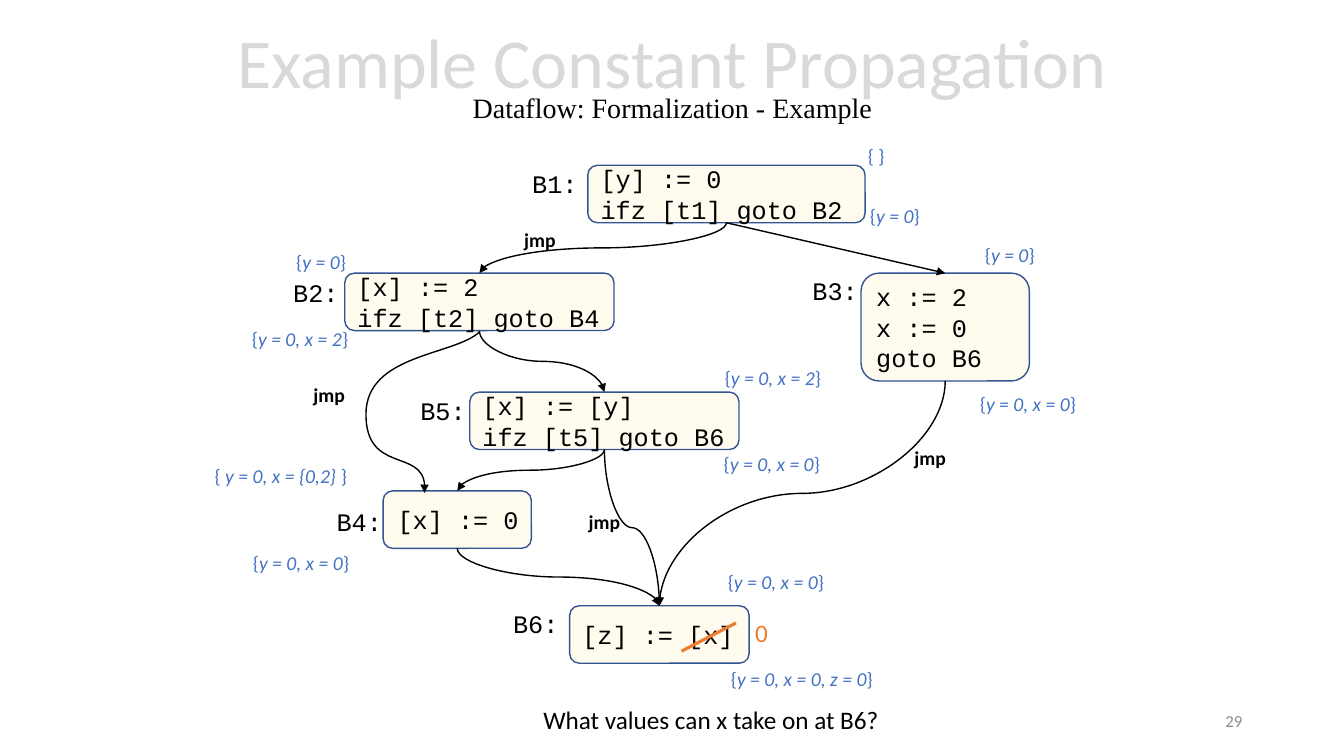
import pptx
import pptx.util
import pptx.dml.color
import pptx.enum.shapes
import pptx.enum.text
import pptx.oxml.ns
import lxml.etree

Inches = pptx.util.Inches
Pt = pptx.util.Pt
RGBColor = pptx.dml.color.RGBColor
qn = pptx.oxml.ns.qn
ALIGN = pptx.enum.text.PP_ALIGN
ANCHOR = pptx.enum.text.MSO_ANCHOR
CONNECTOR = pptx.enum.shapes.MSO_CONNECTOR

BLACK = RGBColor(0x00, 0x00, 0x00)
TITLE_GRAY = RGBColor(0xD9, 0xD9, 0xD9)
NUMBER_GRAY = RGBColor(0x8C, 0x8C, 0x8C)
CREAM = RGBColor(0xFF, 0xF2, 0xCC)
BORDER_BLUE = RGBColor(0x32, 0x54, 0x91)
FACT_BLUE = RGBColor(0x44, 0x72, 0xC4)
ORANGE = RGBColor(0xED, 0x7D, 0x31)

deck = pptx.Presentation()
deck.slide_width = Inches(13.33)
deck.slide_height = Inches(7.5)
page = deck.slides.add_slide(deck.slide_layouts[6])


def add_label(left, top, width, height, texts, size, color, font="Calibri"):
    box = page.shapes.add_textbox(Inches(left), Inches(top), Inches(width), Inches(height))
    box.text_frame.word_wrap = False
    box.text_frame.auto_size = pptx.enum.text.MSO_AUTO_SIZE.SHAPE_TO_FIT_TEXT
    para = box.text_frame.paragraphs[0]
    para.font.size = Pt(size)
    para.font.name = font
    para.font.color.rgb = color
    for text in texts:
        para.add_run().text = text
    return para


def style_line(shape, color, width, arrow):
    shape.line.color.rgb = color
    shape.line.width = Pt(width)
    properties = shape.element.spPr
    if arrow:
        outline = properties.find(qn("a:ln"))
        lxml.etree.SubElement(outline, qn("a:tailEnd")).set("type", "triangle")
    lxml.etree.SubElement(properties, qn("a:effectLst"))


title = page.shapes.add_textbox(Inches(1.67), Inches(0.09), Inches(10), Inches(1.45))
title.text_frame.word_wrap = True
title.text_frame.vertical_anchor = ANCHOR.MIDDLE
para = title.text_frame.paragraphs[0]
para.alignment = ALIGN.CENTER
para.line_spacing = 0.7
for text, size, font, color in [
    ("Example Constant Propagation", 50, "Calibri", TITLE_GRAY),
    ("Dataflow: Formalization - Example", 20, "Times New Roman", BLACK),
]:
    if para.runs:
        para.add_line_break()
    span = para.add_run()
    span.text = text
    span.font.size = Pt(size)
    span.font.name = font
    span.font.color.rgb = color

number = page.shapes.add_textbox(Inches(9.42), Inches(6.95), Inches(3), Inches(0.4))
number.text_frame.word_wrap = True
number.text_frame.vertical_anchor = ANCHOR.MIDDLE
para = number.text_frame.paragraphs[0]
para.text = "29"
para.alignment = ALIGN.RIGHT
para.font.size = Pt(12)
para.font.name = "Calibri"
para.font.color.rgb = NUMBER_GRAY

blocks = {}
for name, left, top, width, height, label_left, label_top, code in [
    ("B1", 5.83, 1.64, 2.75, 0.57, 5.18, 1.62, ["[y] := 0", "ifz [t1] goto B2"]),
    ("B2", 3.42, 2.71, 2.67, 0.57, 2.81, 2.7, ["[x] := 2", "ifz [t2] goto B4"]),
    ("B3", 8.54, 2.71, 1.67, 1.07, 7.96, 2.68, ["x := 2", "x := 0", "goto B6"]),
    ("B4", 3.8, 4.87, 1.47, 0.57, 3.24, 4.97, ["[x] := 0"]),
    ("B5", 4.66, 3.89, 2.67, 0.57, 4.07, 3.87, ["[x] := [y]", "ifz [t5] goto B6"]),
    ("B6", 5.65, 6.01, 1.78, 0.57, 4.99, 5.99, ["[z] := [x]"]),
]:
    block = page.shapes.add_shape(
        pptx.enum.shapes.MSO_SHAPE.ROUNDED_RECTANGLE,
        Inches(left), Inches(top), Inches(width), Inches(height))
    block.shadow.inherit = False
    block.fill.solid()
    block.fill.fore_color.rgb = CREAM
    tint = block.element.spPr.find(qn("a:solidFill")).find(qn("a:srgbClr"))
    lxml.etree.SubElement(tint, qn("a:alpha")).set("val", "30000")
    block.line.color.rgb = BORDER_BLUE
    block.line.width = Pt(1)
    block.text_frame.word_wrap = True
    block.text_frame.vertical_anchor = ANCHOR.MIDDLE
    block.text_frame.text = "\n".join(code)
    for para in block.text_frame.paragraphs:
        para.alignment = ALIGN.RIGHT if name == "B4" else ALIGN.LEFT
        para.font.size = Pt(18)
        para.font.name = "Courier New"
        para.font.color.rgb = BLACK
    blocks[name] = block
    add_label(label_left, label_top, 0.65, 0.4, [name + ":"], 18, BLACK, "Courier New")

for source, target in [("B1", "B2"), ("B1", "B3"), ("B2", "B5"), ("B3", "B6"),
                       ("B5", "B6"), ("B5", "B4"), ("B4", "B6")]:
    straight = target == "B3"
    edge = page.shapes.add_connector(
        CONNECTOR.STRAIGHT if straight else CONNECTOR.CURVE, 0, 0, 0, 0)
    edge.begin_connect(blocks[source], 2)
    edge.end_connect(blocks[target], 0)
    style_line(edge, BLACK, 1, True)
    if not straight:
        middle_x = (edge.begin_x + edge.end_x) // 2
        middle_y = (edge.begin_y + edge.end_y) // 2
        rightward = edge.end_x > edge.begin_x
        drop, reach = edge.height, edge.width
        edge.left, edge.top = middle_x - drop // 2, middle_y - reach // 2
        edge.width, edge.height = drop, reach
        transform = edge.element.spPr.find(qn("a:xfrm"))
        transform.set("rot", "16200000" if rightward else "5400000")
        transform.set("flipH", "1" if rightward else "0")
        transform.set("flipV", "0")

builder = page.shapes.build_freeform(Inches(4.76), Inches(3.29))
builder.add_line_segments(
    [(Inches(x), Inches(y)) for x, y in [
        (4.51, 3.53), (3.63, 3.51), (3.63, 4.11), (3.63, 4.7), (4.26, 4.42), (4.21, 4.89)]],
    close=False)
loop_edge = builder.convert_to_shape()
loop_edge.fill.background()
style_line(loop_edge, BLACK, 1, True)
segments = list(loop_edge.element.iter(qn("a:lnTo")))
outline = segments[0].getparent()
for start in range(0, len(segments), 3):
    curve = lxml.etree.SubElement(outline, qn("a:cubicBezTo"))
    for segment in segments[start:start + 3]:
        curve.append(segment[0])
        outline.remove(segment)

for left, top in [(5.1, 2.21), (3.01, 3.75), (5.74, 5.01), (8.97, 4.37)]:
    add_label(left, top, 0.52, 0.34, ["jmp"], 14, BLACK).font.bold = True

for left, top, width, fact in [
    (8.51, 1.38, 0.37, " "),
    (8.53, 1.97, 0.7, "y = 0"),
    (9.67, 2.36, 0.7, "y = 0"),
    (2.84, 2.43, 0.7, "y = 0"),
    (2.4, 3.19, 1.16, "y = 0, x = 2"),
    (7.09, 3.58, 1.16, "y = 0, x = 2"),
    (9.62, 3.84, 1.16, "y = 0, x = 0"),
    (7.08, 4.43, 1.16, "y = 0, x = 0"),
    (2.03, 4.55, 1.52, " y = 0, x = {0,2} "),
    (2.41, 5.42, 1.16, "y = 0, x = 0"),
    (7.12, 5.61, 1.16, "y = 0, x = 0"),
    (7.15, 6.57, 1.62, "y = 0, x = 0, z = 0"),
]:
    para = add_label(left, top, width, 0.34, ["{", fact, "}"], 14, FACT_BLUE)
    para.runs[1].font.italic = fact != " "

strike = page.shapes.add_connector(
    CONNECTOR.STRAIGHT, Inches(6.76), Inches(6.46), Inches(7.3), Inches(6.18))
style_line(strike, ORANGE, 2.25, False)
add_label(7.39, 6.08, 0.33, 0.4, ["0"], 18, ORANGE)
add_label(5.29, 6.94, 3.57, 0.4, ["What values can x take on at B6?"], 18, BLACK)

deck.save("out.pptx")
